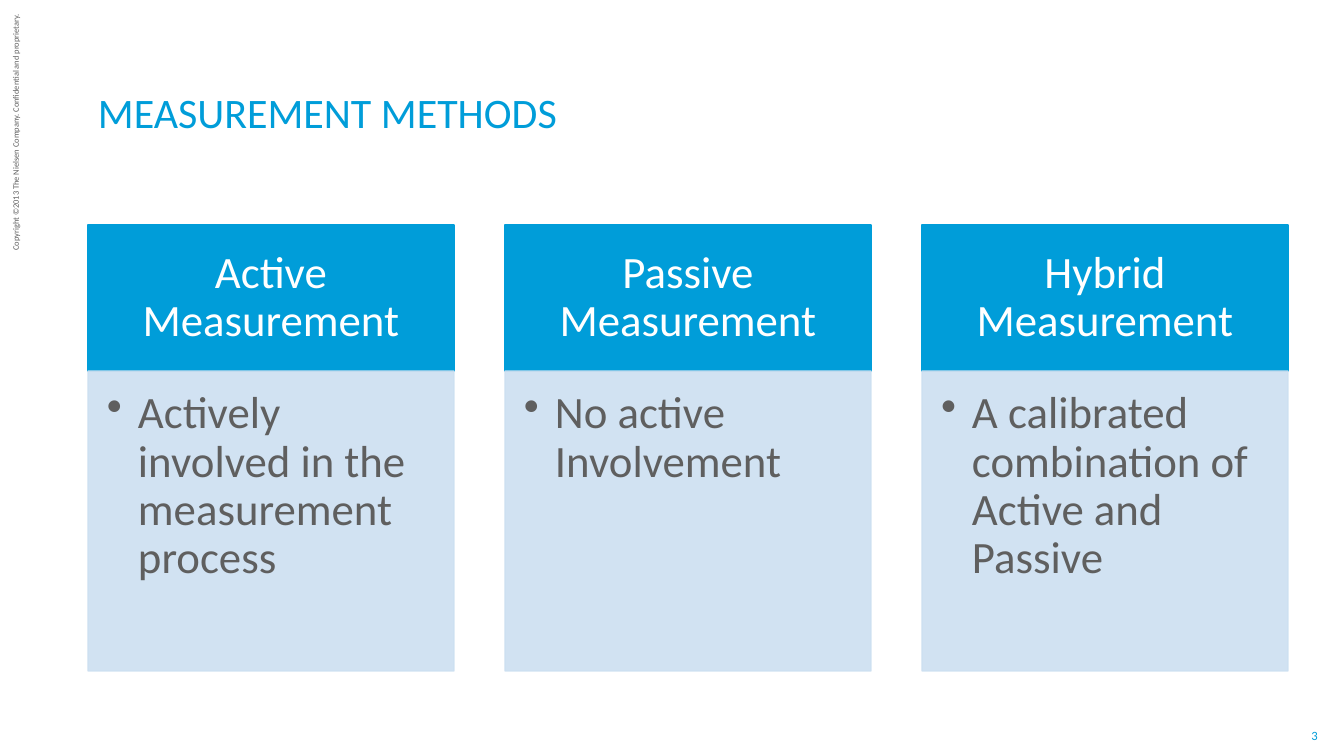
from lxml.etree import SubElement
from pptx import Presentation
from pptx.dml.color import RGBColor
from pptx.enum.shapes import MSO_SHAPE
from pptx.enum.text import MSO_ANCHOR, PP_ALIGN
from pptx.oxml.ns import qn
from pptx.util import Emu, Pt

EMU_PER_PX = 914400 / 100.8
BLUE = RGBColor(0x00, 0x9D, 0xD9)
PALE_BLUE = RGBColor(0xCC, 0xDF, 0xF1)
GREY = RGBColor(0x5F, 0x5F, 0x5F)
WHITE = RGBColor(0xFF, 0xFF, 0xFF)

METHODS = [
    ("Active Measurement", "Actively involved in the measurement process"),
    ("Passive Measurement", "No active Involvement"),
    ("Hybrid Measurement", "A calibrated combination of Active and Passive"),
]


def px(length):
    return Emu(round(length * EMU_PER_PX))


def write(shape, text, size, color, margins, bullet_indent=0, **paragraph_format):
    """Fill a shape with one paragraph; margins run left, top, right, bottom."""
    frame = shape.text_frame
    for side, margin in zip(("left", "top", "right", "bottom"), margins):
        setattr(frame, f"margin_{side}", px(margin))
    para = frame.paragraphs[0]
    for name, value in paragraph_format.items():
        setattr(para, name, value)
    if bullet_indent:
        properties = para._p.get_or_add_pPr()
        properties.set("marL", str(px(bullet_indent)))
        properties.set("indent", str(-px(bullet_indent)))
        SubElement(properties, qn("a:buChar"), char="•")
    span = para.add_run()
    span.text = text
    for name, value in {"name": "Calibri", "size": Pt(size)}.items():
        setattr(span.font, name, value)
    span.font.color.rgb = color


def add_label(page, box, text, size, color, margins, anchor=MSO_ANCHOR.TOP,
              wrap=False, rotation=0, align=PP_ALIGN.LEFT):
    label = page.shapes.add_textbox(*map(px, box))
    label.rotation = rotation
    label.text_frame.word_wrap = wrap
    label.text_frame.vertical_anchor = anchor
    write(label, text, size, color, margins, alignment=align)


def add_panel(page, box, color, anchor, opacity=100):
    panel = page.shapes.add_shape(MSO_SHAPE.RECTANGLE, *map(px, box))
    panel.shadow.inherit = False
    panel.line.width = Pt(0.85)
    for fill in (panel.fill, panel.line.fill):
        fill.solid()
        fill.fore_color.rgb = color
    if opacity < 100:
        for color_element in panel._element.spPr.iter(qn("a:srgbClr")):
            SubElement(color_element, qn("a:alpha"), val=str(opacity * 1000))
    panel.text_frame.word_wrap = True
    panel.text_frame.vertical_anchor = anchor
    return panel


def add_method(page, box, heading, description):
    left, top, width, height = box
    heading_height = 146
    header = add_panel(page, (left, top, width, heading_height), BLUE, MSO_ANCHOR.MIDDLE)
    write(header, heading, 32, WHITE, (25, 14, 25, 14),
          alignment=PP_ALIGN.CENTER, line_spacing=0.9)
    body = add_panel(page, (left, top + heading_height, width, height - heading_height),
                     PALE_BLUE, MSO_ANCHOR.TOP, opacity=90)
    write(body, description, 32, GREY, (19, 19, 25, 28), bullet_indent=31,
          alignment=PP_ALIGN.LEFT, line_spacing=0.9)


def add_methods(page, box, gap):
    left, top, width, height = box
    column_width = (width - gap * (len(METHODS) - 1)) // len(METHODS)
    for index, (heading, description) in enumerate(METHODS):
        column_left = left + index * (column_width + gap)
        add_method(page, (column_left, top, column_width, height), heading, description)


def main():
    deck = Presentation()
    deck.slide_width, deck.slide_height = px(1344), px(756)
    page = deck.slides.add_slide(deck.slide_layouts[6])
    add_label(page, (-115, 120, 261, 20),
              "Copyright ©2013 The Nielsen Company. Confidential and proprietary.",
              6, GREY, (10, 5, 10, 5), rotation=270)
    add_label(page, (1307, 728, 15, 15), "3", 9, BLUE, (0, 0, 0, 0),
              anchor=MSO_ANCHOR.MIDDLE, align=PP_ALIGN.CENTER)
    add_label(page, (88, 75, 1200, 62), "MEASUREMENT METHODS", 30, BLUE,
              (10, 0, 10, 0), anchor=MSO_ANCHOR.BOTTOM, wrap=True)
    add_methods(page, (88, 225, 1200, 446), gap=51)
    deck.save("out.pptx")


if __name__ == "__main__":
    main()
